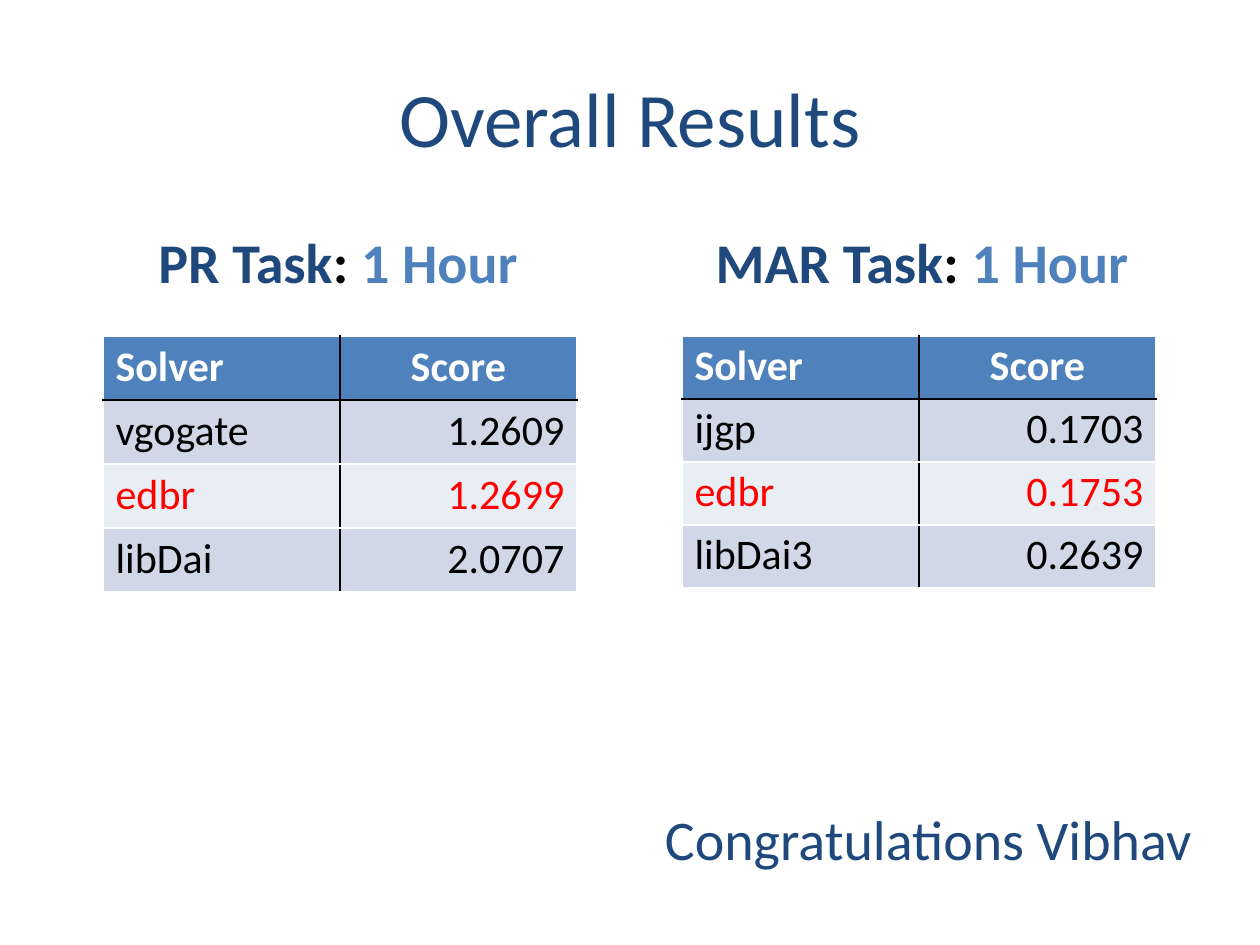
"""Build the overall results slide with one score table per task."""
from lxml.etree import SubElement
from pptx import Presentation
from pptx.dml.color import RGBColor
from pptx.enum.text import MSO_ANCHOR, MSO_AUTO_SIZE, PP_ALIGN
from pptx.oxml.ns import qn
from pptx.util import Pt

PX = 914400 // 126
COLORS = {
    "navy": "1F497D",
    "blue": "4F81BD",
    "black": "000000",
    "white": "FFFFFF",
    "red": "FF0000",
    "band": "D0D8E8",
    "light": "E9EDF4",
}


def write(frame, text, size=24, color="black", bold=False, align=PP_ALIGN.LEFT):
    paragraph = frame.paragraphs[0]
    paragraph.alignment = align
    run = paragraph.add_run()
    run.text = text
    run.font.name = "Calibri"
    run.font.size = Pt(size)
    run.font.bold = bold
    run.font.color.rgb = RGBColor.from_string(COLORS[color])


def draw_borders(cell, **sides):
    properties = cell._tc.get_or_add_tcPr()
    for side, color in sides.items():
        line = SubElement(properties, qn(f"a:ln{side}"), w=str(Pt(1)))
        fill = SubElement(line, qn("a:solidFill"))
        SubElement(fill, qn("a:srgbClr"), val=COLORS[color])


deck = Presentation()
deck.slide_width = 1260 * PX
deck.slide_height = 945 * PX
slide = deck.slides.add_slide(deck.slide_layouts[6])

title = slide.shapes.add_textbox(63 * PX, 38 * PX, 1134 * PX, 158 * PX).text_frame
title.word_wrap = True
title.vertical_anchor = MSO_ANCHOR.MIDDLE
write(title, "Overall Results", size=44, color="navy", align=PP_ALIGN.CENTER)

tasks = [
    ("PR Task", 144, 388, 103, 64, 6,
     [("vgogate", "1.2609"), ("edbr", "1.2699"), ("libDai", "2.0707")]),
    ("MAR Task", 701, 442, 682, 63, 5,
     [("ijgp", "0.1703"), ("edbr", "0.1753"), ("libDai3", "0.2639")]),
]
for task, heading_left, heading_width, left, row_height, margin, scores in tasks:
    heading = slide.shapes.add_textbox(
        heading_left * PX, 221 * PX, heading_width * PX, 81 * PX).text_frame
    heading.word_wrap = False
    heading.auto_size = MSO_AUTO_SIZE.SHAPE_TO_FIT_TEXT
    for text, color in [(task, "navy"), (": ", "black"), ("1 Hour", "blue")]:
        write(heading, text, size=32, color=color, bold=True, align=PP_ALIGN.CENTER)

    rows = [("Solver", "Score"), *scores]
    table = slide.shapes.add_table(
        len(rows), 2, left * PX, 336 * PX, 474 * PX, len(rows) * row_height * PX).table
    for r, row in enumerate(rows):
        table.rows[r].height = row_height * PX
        header = r == 0
        if header:
            fill, color = "blue", "white"
        else:
            fill = "band" if r % 2 else "light"
            color = "red" if row[0] == "edbr" else "black"
        number_align = PP_ALIGN.CENTER if header else PP_ALIGN.RIGHT
        for c, text in enumerate(row):
            cell = table.cell(r, c)
            cell.margin_top = cell.margin_bottom = margin * PX
            draw_borders(
                cell,
                L="black" if c else "white",
                R="white" if c else "black",
                T="black" if r == 1 else "white",
                B="black" if header else "white",
            )
            cell.fill.solid()
            cell.fill.fore_color.rgb = RGBColor.from_string(COLORS[fill])
            write(cell.text_frame, text, color=color, bold=header,
                  align=number_align if c else PP_ALIGN.LEFT)

congratulations = slide.shapes.add_textbox(
    649 * PX, 798 * PX, 559 * PX, 81 * PX).text_frame
congratulations.word_wrap = False
congratulations.auto_size = MSO_AUTO_SIZE.SHAPE_TO_FIT_TEXT
write(congratulations, "Congratulations Vibhav", size=32, color="navy",
      align=PP_ALIGN.CENTER)

deck.save("out.pptx")
